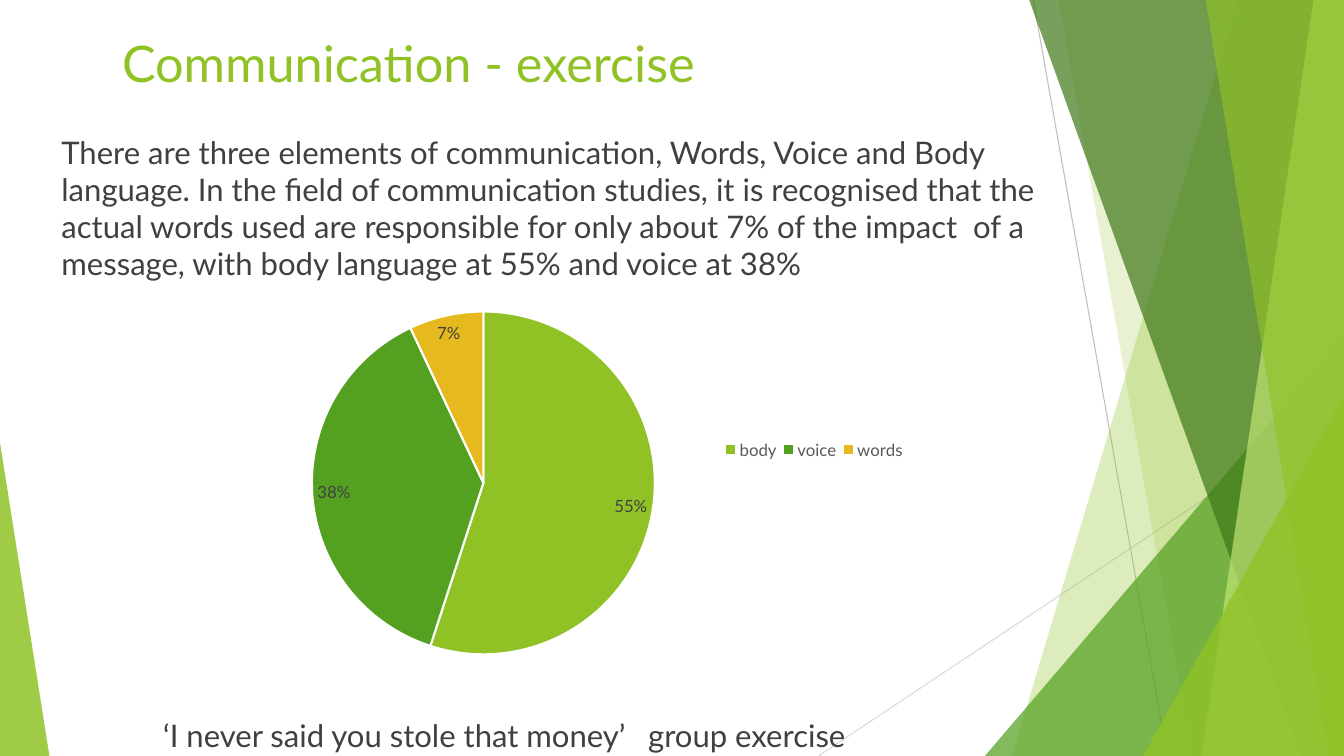
from dataclasses import dataclass

from lxml.etree import SubElement
from pptx import Presentation
from pptx.chart.data import CategoryChartData
from pptx.dml.color import RGBColor
from pptx.enum.chart import XL_CHART_TYPE, XL_LABEL_POSITION, XL_LEGEND_POSITION
from pptx.enum.shapes import MSO_CONNECTOR, MSO_SHAPE
from pptx.enum.text import MSO_ANCHOR, MSO_AUTO_SIZE, PP_ALIGN
from pptx.oxml.ns import qn
from pptx.util import Inches, Pt

SLIDE_WIDTH = Inches(13.33)
SLIDE_HEIGHT = Inches(7.5)
FONT = "Lato"

LIME = RGBColor(0x90, 0xC2, 0x26)
GREEN = RGBColor(0x54, 0xA0, 0x21)
FOREST = RGBColor(0x3F, 0x78, 0x19)
PALE_LIME = RGBColor(0xC0, 0xE4, 0x74)
GOLD = RGBColor(0xE6, 0xB9, 0x1E)
WHITE = RGBColor(0xFF, 0xFF, 0xFF)
INK = RGBColor(0x40, 0x40, 0x40)
LEGEND_GREY = RGBColor(0x59, 0x59, 0x59)
MID_GREY = RGBColor(0xBF, 0xBF, 0xBF)
LIGHT_GREY = RGBColor(0xD9, 0xD9, 0xD9)


@dataclass(frozen=True)
class Area:
    left: float
    top: float
    width: float
    height: float


@dataclass(frozen=True)
class Ray:
    start: tuple[float, float]
    end: tuple[float, float]
    color: RGBColor


@dataclass(frozen=True)
class Panel:
    top_left: float
    bottom_left: float
    color: RGBColor
    opacity: int


@dataclass(frozen=True)
class Wedge:
    area: Area
    peak: float
    color: RGBColor
    opacity: int


@dataclass(frozen=True)
class Element:
    label: str
    impact: float
    color: RGBColor


RAYS = (
    Ray((76.88, 0), (86.85, 100), MID_GREY),
    Ray((100, 53.73), (60.9, 100), LIGHT_GREY),
)
FACETS = (
    Panel(92.1, 75.3, LIME, 30),
    Panel(78.75, 88.73, LIME, 20),
    Wedge(Area(73.28, 44.4, 26.72, 55.6), 1, GREEN, 72),
    Panel(76.58, 96.83, FOREST, 70),
    Panel(97.73, 89.4, PALE_LIME, 70),
    Panel(89.7, 98.85, LIME, 65),
    Wedge(Area(85.05, 52.4, 14.95, 47.6), 1, LIME, 80),
    Wedge(Area(0, 58.53, 3.68, 41.47), 0, LIME, 85),
)
ELEMENTS = (
    Element("body", 0.55, LIME),
    Element("voice", 0.38, GREEN),
    Element("words", 0.07, GOLD),
)
INTRO = (
    "There are three elements of communication, Words, Voice and Body language. "
    "In the field of communication studies, it is recognised that the actual words "
    "used are responsible for only about 7% of the impact  of a message, with body "
    "language at 55% and voice at 38%"
)


def col(percent: float) -> int:
    return round(SLIDE_WIDTH * percent / 100)


def row(percent: float) -> int:
    return round(SLIDE_HEIGHT * percent / 100)


def box(area: Area) -> tuple[int, int, int, int]:
    return col(area.left), row(area.top), col(area.width), row(area.height)


def draw_ray(slide, ray: Ray) -> None:
    line = slide.shapes.add_connector(
        MSO_CONNECTOR.STRAIGHT,
        col(ray.start[0]), row(ray.start[1]), col(ray.end[0]), row(ray.end[1]),
    )
    line.line.color.rgb = ray.color
    line.line.width = Pt(0.75)
    SubElement(line.element.spPr, qn("a:effectLst"))


def draw_facet(slide, facet: Panel | Wedge) -> None:
    if isinstance(facet, Panel):
        outline = slide.shapes.build_freeform(col(facet.top_left), 0)
        outline.add_line_segments([
            (SLIDE_WIDTH, 0), (SLIDE_WIDTH, SLIDE_HEIGHT),
            (col(facet.bottom_left), SLIDE_HEIGHT),
        ])
        shape = outline.convert_to_shape()
    else:
        shape = slide.shapes.add_shape(MSO_SHAPE.ISOSCELES_TRIANGLE, *box(facet.area))
        shape.adjustments[0] = facet.peak
    shape.shadow.inherit = False
    shape.line.fill.background()
    shape.fill.solid()
    shape.fill.fore_color.rgb = facet.color
    tint = shape.element.spPr.find(f"{qn('a:solidFill')}/{qn('a:srgbClr')}")
    SubElement(tint, qn("a:alpha"), val=str(facet.opacity * 1000))


def style_font(font, size: float, color: RGBColor) -> None:
    font.name = FONT
    font.size = Pt(size)
    font.color.rgb = color


def write(shape, text: str, size: float, color: RGBColor):
    frame = shape.text_frame
    frame.word_wrap = True
    frame.auto_size = MSO_AUTO_SIZE.NONE
    frame.vertical_anchor = MSO_ANCHOR.TOP
    paragraph = frame.paragraphs[0]
    paragraph.alignment = PP_ALIGN.LEFT
    run = paragraph.add_run()
    run.text = text
    style_font(run.font, size, color)
    return paragraph


def write_title(slide) -> None:
    title = slide.shapes.title
    title.left, title.top, title.width, title.height = box(Area(8.33, 3.6, 69.53, 10.53))
    write(title, "Communication - exercise", 36, LIME)
    title.element.getparent().append(title.element)


def write_body(slide) -> None:
    intro = slide.shapes.add_textbox(*box(Area(3.83, 16.93, 79.28, 22)))
    write(intro, INTRO, 22.2, INK)
    exercise = slide.shapes.add_textbox(*box(Area(11.4, 94.1, 60, 5.9)))
    sentence = write(
        exercise, "‘I never said you stole that money’\tgroup exercise", 22.2, INK
    )
    stops = SubElement(sentence._p.get_or_add_pPr(), qn("a:tabLst"))
    SubElement(stops, qn("a:tab"), pos=str(Inches(4.81)), algn="l")


def place_part(part, index: int, x: float, y: float, w: float, h: float) -> None:
    for previous in part.findall(qn("c:layout")):
        part.remove(previous)
    layout = SubElement(part, qn("c:layout"))
    part.insert(index, layout)
    manual = SubElement(layout, qn("c:manualLayout"))
    if index == 0:
        SubElement(manual, qn("c:layoutTarget"), val="inner")
    for key, value in (("xMode", "edge"), ("yMode", "edge"),
                       ("x", x), ("y", y), ("w", w), ("h", h)):
        SubElement(manual, qn(f"c:{key}"), val=str(value))


def draw_impact_pie(slide) -> None:
    impact = CategoryChartData(number_format="0%")
    impact.categories = [element.label for element in ELEMENTS]
    impact.add_series("Series 1", [element.impact for element in ELEMENTS])
    chart = slide.shapes.add_chart(
        XL_CHART_TYPE.PIE, *box(Area(4.95, 36, 67.43, 52.13)), impact
    ).chart
    chart.has_title = False
    style_font(chart.font, 10, INK)
    chart.has_legend = True
    chart.legend.position = XL_LEGEND_POSITION.RIGHT
    chart.legend.include_in_layout = False
    style_font(chart.legend.font, 12, LEGEND_GREY)
    pie = chart.plots[0]
    pie.vary_by_categories = True
    for index, element in enumerate(ELEMENTS):
        slice_format = pie.series[0].points[index].format
        slice_format.fill.solid()
        slice_format.fill.fore_color.rgb = element.color
        slice_format.line.color.rgb = WHITE
        slice_format.line.width = Pt(1.5)
    labels = pie.series[0].data_labels
    labels.show_value = True
    labels.number_format = "0%"
    labels.number_format_is_linked = False
    labels.position = XL_LABEL_POSITION.BEST_FIT
    style_font(labels.font, 12, INK)
    place_part(chart.element.find(f".//{qn('c:plotArea')}"), 0, 0.27, 0.1, 0.38, 0.87)
    place_part(chart.element.find(f".//{qn('c:legend')}"), 1, 0.72, 0.41, 0.21, 0.08)


def main() -> None:
    deck = Presentation()
    deck.slide_width, deck.slide_height = SLIDE_WIDTH, SLIDE_HEIGHT
    slide = deck.slides.add_slide(deck.slide_layouts.get_by_name("Title Only"))
    for ray in RAYS:
        draw_ray(slide, ray)
    for facet in FACETS:
        draw_facet(slide, facet)
    write_title(slide)
    write_body(slide)
    draw_impact_pie(slide)
    deck.save("out.pptx")


if __name__ == "__main__":
    main()
